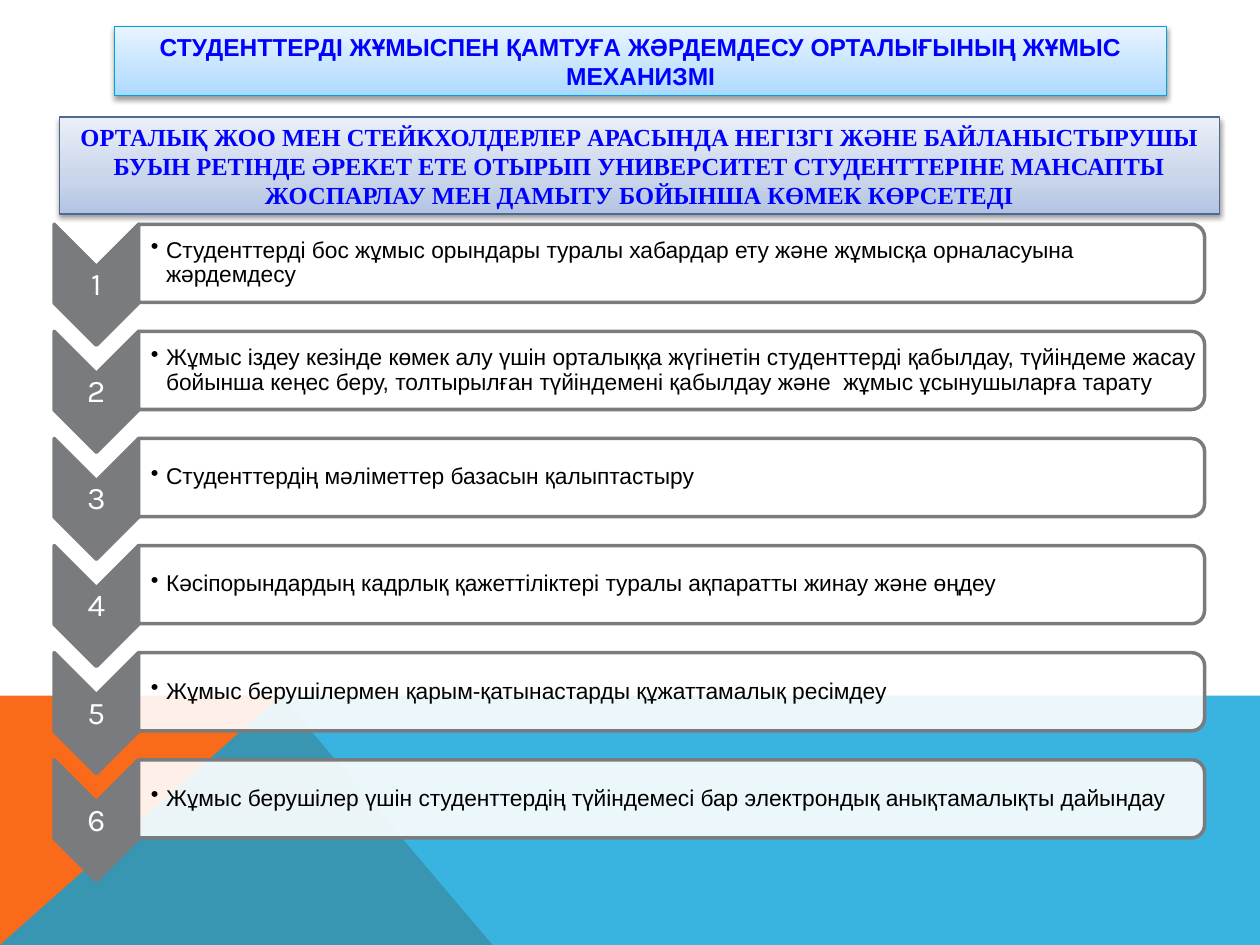
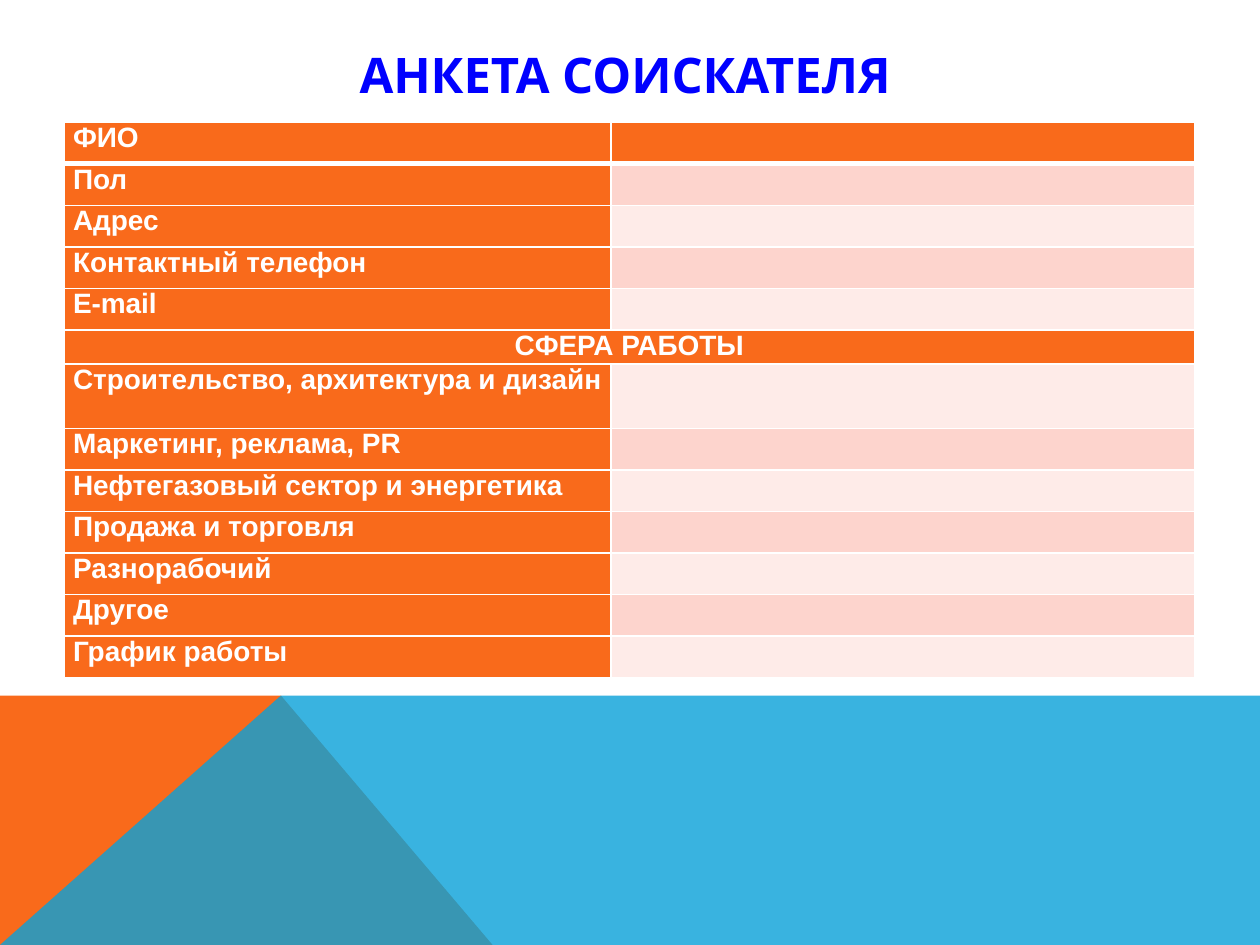
from lxml.etree import SubElement
from pptx import Presentation
from pptx.dml.color import RGBColor
from pptx.enum.shapes import MSO_SHAPE as Shape
from pptx.enum.text import MSO_ANCHOR as Anchor, PP_ALIGN as Align
from pptx.oxml.ns import qn
from pptx.util import Inches, Pt

WHITE = RGBColor(0xFF, 0xFF, 0xFF)
BLACK = RGBColor(0x00, 0x00, 0x00)
BLUE = RGBColor(0x00, 0x00, 0xFF)
ORANGE = RGBColor(0xF9, 0x6A, 0x1B)
SKY = RGBColor(0x08, 0xA1, 0xD9)
GRAY = RGBColor(0x79, 0x7B, 0x7E)
DARK_PINK = RGBColor(0xFD, 0xD4, 0xCD)
LIGHT_PINK = RGBColor(0xFE, 0xEB, 0xE8)
AZURE_LINE = RGBColor(0x03, 0xA0, 0xD9)
STEEL_LINE = RGBColor(0x4D, 0x6B, 0x92)
AZURE_STOPS = [(0, RGBColor(0xAB, 0xD8, 0xFF)), (35, RGBColor(0xC3, 0xE3, 0xFF)),
               (100, RGBColor(0xE8, 0xF4, 0xFF))]
STEEL_STOPS = [(0, RGBColor(0xB2, 0xC3, 0xE3)), (35, RGBColor(0xC9, 0xD5, 0xEA)),
               (100, RGBColor(0xEA, 0xEF, 0xF8))]

HEADING = "СТУДЕНТТЕРДІ ЖҰМЫСПЕН ҚАМТУҒА ЖӘРДЕМДЕСУ ОРТАЛЫҒЫНЫҢ ЖҰМЫС МЕХАНИЗМІ"
MISSION = ("ОРТАЛЫҚ ЖОО МЕН СТЕЙКХОЛДЕРЛЕР АРАСЫНДА НЕГІЗГІ ЖӘНЕ БАЙЛАНЫСТЫРУШЫ "
           "БУЫН РЕТІНДЕ ӘРЕКЕТ ЕТЕ ОТЫРЫП УНИВЕРСИТЕТ СТУДЕНТТЕРІНЕ МАНСАПТЫ "
           "ЖОСПАРЛАУ МЕН ДАМЫТУ БОЙЫНША КӨМЕК КӨРСЕТЕДІ")
STEPS = [
    "Студенттерді бос жұмыс орындары туралы хабардар ету және жұмысқа орналасуына жәрдемдесу",
    "Жұмыс іздеу кезінде көмек алу үшін орталыққа жүгінетін студенттерді қабылдау, түйіндеме "
    "жасау бойынша кеңес беру, толтырылған түйіндемені қабылдау және  жұмыс ұсынушыларға тарату",
    "Студенттердің мәліметтер базасын қалыптастыру",
    "Кәсіпорындардың кадрлық қажеттіліктері туралы ақпаратты жинау және өңдеу",
    "Жұмыс берушілермен қарым-қатынастарды құжаттамалық ресімдеу",
    "Жұмыс берушілер үшін студенттердің түйіндемесі бар электрондық анықтамалықты дайындау",
]
SECTION = "СФЕРА РАБОТЫ"
FIELDS = ["ФИО", "Пол", "Адрес", "Контактный телефон", "E-mail", SECTION,
          "Строительство, архитектура и дизайн", "Маркетинг, реклама, PR",
          "Нефтегазовый сектор и энергетика", "Продажа и торговля",
          "Разнорабочий", "Другое", "График работы"]
ROW_HEIGHTS = {5: 0.27, 6: 0.51}


def add_run(paragraph, text, size, font, color, bold=False):
    run = paragraph.add_run()
    run.text = text
    run.font.size = Pt(size)
    run.font.name = font
    run.font.bold = bold
    run.font.color.rgb = color


def set_fill(shape, color, opacity=100):
    shape.shadow.inherit = False
    shape.fill.solid()
    shape.fill.fore_color.rgb = color
    if opacity < 100:
        for node in shape.fill._xPr.findall(f"{qn('a:solidFill')}/{qn('a:srgbClr')}"):
            SubElement(node, qn("a:alpha"), val=str(opacity * 1000))


def add_text(slide, left, top, width, height, text, size, font, color,
             margins=(0.01, 0.01, 0.01, 0.01), bold=False, align=Align.CENTER, spacing=None):
    box = slide.shapes.add_textbox(Inches(left), Inches(top), Inches(width), Inches(height))
    frame = box.text_frame
    frame.word_wrap = True
    frame.vertical_anchor = Anchor.MIDDLE
    (frame.margin_left, frame.margin_top,
     frame.margin_right, frame.margin_bottom) = map(Inches, margins)
    paragraph = frame.paragraphs[0]
    paragraph.alignment = align
    paragraph.line_spacing = spacing
    add_run(paragraph, text, size, font, color, bold)
    return paragraph


def add_polygon(slide, points, color, opacity=100):
    corners = [(Inches(x), Inches(y)) for x, y in points]
    builder = slide.shapes.build_freeform(*corners[0])
    builder.add_line_segments(corners[1:], close=True)
    shape = builder.convert_to_shape()
    set_fill(shape, color, opacity)
    shape.line.fill.background()


def add_background(slide, top=5.52, bottom=7.5, peak=2.23, right=10):
    add_polygon(slide, [(0, bottom), (0, top), (peak, top), (3.91, bottom)], ORANGE)
    add_polygon(slide, [(0, bottom), (peak, top), (right, top), (right, bottom)], SKY, 80)


def add_banner(slide, left, top, width, height, text, font, stops, line_color):
    banner = slide.shapes.add_shape(
        Shape.RECTANGLE, Inches(left), Inches(top), Inches(width), Inches(height))
    banner.fill.gradient()
    banner.fill.gradient_angle = 90
    properties = banner.fill._xPr
    stop_list = properties.find(f"{qn('a:gradFill')}/{qn('a:gsLst')}")
    for old_stop in list(stop_list):
        stop_list.remove(old_stop)
    for position, color in stops:
        stop = SubElement(stop_list, qn("a:gs"), pos=str(position * 1000))
        SubElement(stop, qn("a:srgbClr"), val=str(color))
    banner.line.color.rgb = line_color
    banner.line.width = Pt(0.75)
    banner.shadow.inherit = False
    shadow = SubElement(properties.find(qn("a:effectLst")), qn("a:outerShdw"),
                        blurRad=str(Pt(3.1)), dist=str(Pt(1.6)), dir="5400000", rotWithShape="0")
    shade = SubElement(shadow, qn("a:srgbClr"), val=str(BLACK))
    SubElement(shade, qn("a:alpha"), val="38000")
    banner.text_frame.word_wrap = True
    banner.text_frame.vertical_anchor = Anchor.MIDDLE
    paragraph = banner.text_frame.paragraphs[0]
    paragraph.alignment = Align.CENTER
    add_run(paragraph, text, 14, font, BLUE, True)


def add_turned_shape(slide, kind, left, top, width, height, color, opacity=100):
    shift = (width - height) / 2
    shape = slide.shapes.add_shape(kind, Inches(left + shift), Inches(top - shift),
                                   Inches(height), Inches(width))
    shape.rotation = 90
    set_fill(shape, color, opacity)
    shape.line.color.rgb = GRAY
    shape.line.width = Pt(2)


def add_step(slide, left, top, number, text):
    chevron_width = 0.67
    body_left = left + chevron_width
    add_turned_shape(slide, Shape.CHEVRON, left, top, chevron_width, 0.96, GRAY)
    add_text(slide, left, top + 0.34, chevron_width, 0.29, str(number), 18, "Karla", WHITE,
             spacing=0.9)
    add_turned_shape(slide, Shape.ROUND_2_SAME_RECTANGLE, body_left, top, 8.46, 0.62, WHITE, 90)
    paragraph = add_text(slide, body_left, top + 0.03, 8.43, 0.56, text, 13, "Arial", BLACK,
                         (0.1, 0.01, 0.01, 0.01), align=Align.LEFT, spacing=0.9)
    properties = paragraph._p.get_or_add_pPr()
    properties.set("marL", str(Inches(0.12)))
    properties.set("indent", str(-Inches(0.12)))
    SubElement(properties, qn("a:buChar"), char="•")


def style_cell(cell, color, bottom_width=1):
    properties = cell._tc.get_or_add_tcPr()
    for side, width in (("L", 1), ("R", 1), ("T", 1), ("B", bottom_width)):
        border = SubElement(properties, qn(f"a:ln{side}"), w=str(Pt(width)))
        SubElement(SubElement(border, qn("a:solidFill")), qn("a:srgbClr"), val=str(WHITE))
    cell.fill.solid()
    cell.fill.fore_color.rgb = color
    cell.margin_left = cell.margin_right = Inches(0.07)
    cell.margin_top = cell.margin_bottom = 0


def add_form(slide, left, top):
    widths = (4.34, 4.63)
    heights = [ROW_HEIGHTS.get(row, 0.33) for row in range(len(FIELDS))]
    table = slide.shapes.add_table(len(FIELDS), 2, Inches(left), Inches(top),
                                   Inches(sum(widths)), Inches(sum(heights))).table
    for column, width in zip(table.columns, widths):
        column.width = Inches(width)
    for index, (field, height) in enumerate(zip(FIELDS, heights)):
        table.rows[index].height = Inches(height)
        label, answer = table.cell(index, 0), table.cell(index, 1)
        band = DARK_PINK if index % 2 else LIGHT_PINK
        bottom_width = 1 if index else 3
        style_cell(label, ORANGE, bottom_width)
        style_cell(answer, band if index else ORANGE, bottom_width)
        paragraph = label.text_frame.paragraphs[0]
        add_run(paragraph, field, 16, "Arial", WHITE, True)
        SubElement(answer.text_frame.paragraphs[0]._p, qn("a:endParaRPr"), sz="1600")
        if field == SECTION:
            paragraph.alignment = Align.CENTER
            label.merge(answer)


def build_mechanism_slide(slide):
    add_background(slide)
    for index, text in enumerate(STEPS):
        add_step(slide, 0.43, 1.78 + index * 0.85, index + 1, text)
    add_banner(slide, 0.91, 0.21, 8.35, 0.55, HEADING, "Arial", AZURE_STOPS, AZURE_LINE)
    add_banner(slide, 0.47, 0.93, 9.21, 0.77, MISSION, "Times New Roman",
               STEEL_STOPS, STEEL_LINE)


def build_form_slide(slide):
    add_background(slide)
    add_text(slide, 0.9, 0.29, 8.22, 0.6, "АНКЕТА СОИСКАТЕЛЯ ", 28, "Karla", BLUE,
             (0.1, 0.05, 0.1, 0.05), bold=True)
    add_form(slide, 0.51, 0.97)


def main():
    presentation = Presentation()
    presentation.slide_width = Inches(10)
    presentation.slide_height = Inches(7.5)
    for build in (build_mechanism_slide, build_form_slide):
        build(presentation.slides.add_slide(presentation.slide_layouts[6]))
    presentation.save("out.pptx")


if __name__ == "__main__":
    main()
